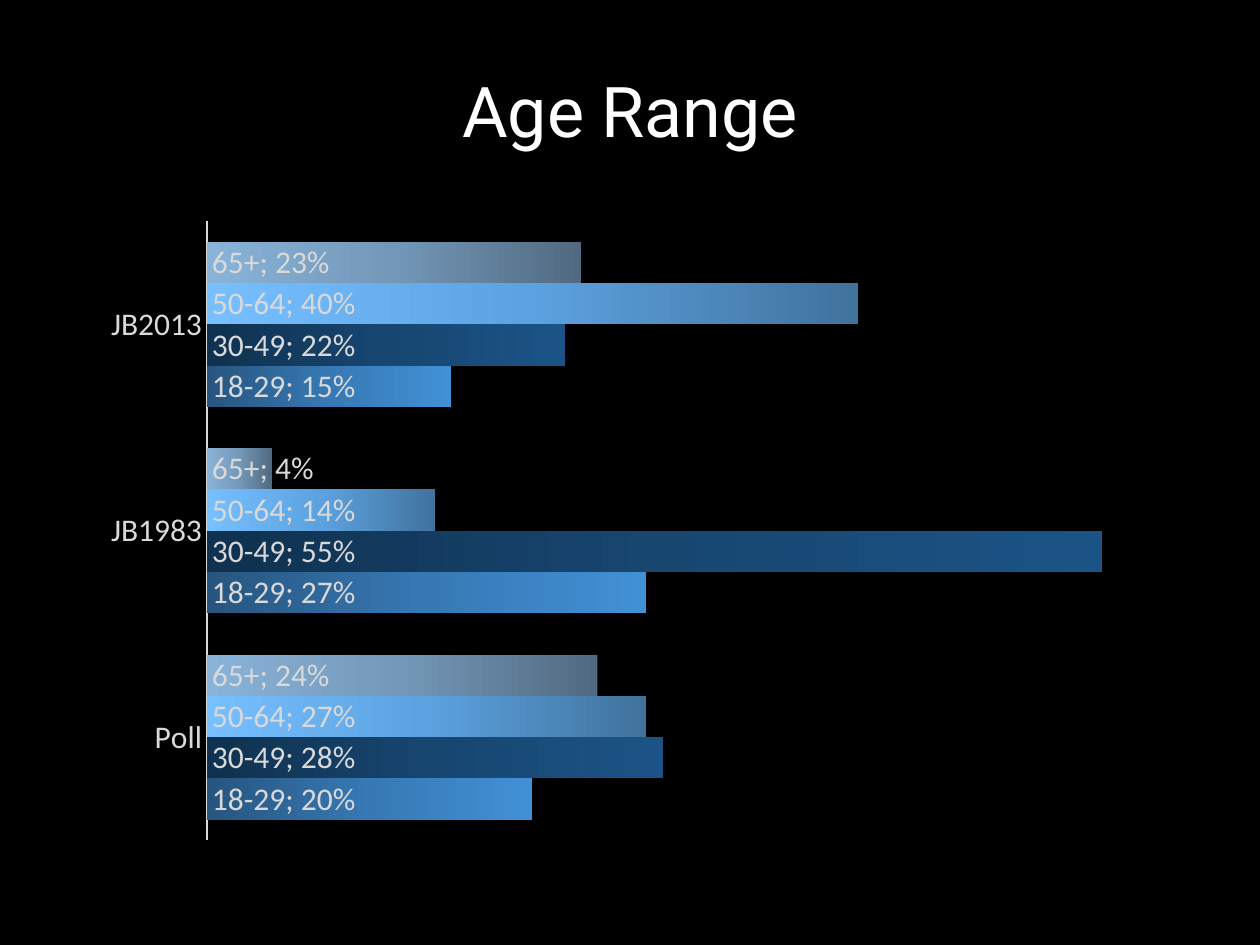
"""Build the age range slide with a clustered bar chart of three surveys."""
from copy import deepcopy
from dataclasses import dataclass

from lxml import etree
from pptx import Presentation, util as u
from pptx.chart import data as chart_data
from pptx.chart.chart import Chart
from pptx.dml.color import RGBColor
from pptx.enum import chart as ch, text as tx
from pptx.oxml.ns import qn
from pptx.slide import Slide

LABEL_COLOR = "D9D9D9"
SURVEYS = ("Poll", "JB1983", "JB2013")
PLOT_LAYOUT = {
    "layoutTarget": "inner", "xMode": "edge", "yMode": "edge",
    "x": "0.127", "y": "0", "w": "0.861", "h": "0.96",
}


@dataclass(frozen=True)
class AgeGroup:
    name: str
    shares: tuple[float, float, float]
    gradient: tuple[str, str, str]
    angle: int


AGE_GROUPS = (
    AgeGroup("18-29", (0.20, 0.27, 0.15), ("27557F", "3779B4", "4190D6"), 0),
    AgeGroup("30-49", (0.28, 0.55, 0.22), ("10314F", "174671", "1B5386"), 0),
    AgeGroup("50-64", (0.27, 0.14, 0.40), ("40729D", "5CA2E0", "77BFFF"), 180),
    AgeGroup("65+", (0.24, 0.04, 0.23), ("516A81", "7397B7", "89B3D9"), 180),
)


def rgb(color: str) -> RGBColor:
    return RGBColor.from_string(color)


def add_title(slide: Slide, title: str) -> None:
    box = slide.shapes.add_textbox(u.Pt(36), u.Pt(20), u.Pt(648), u.Pt(70))
    frame = box.text_frame
    frame.word_wrap = True
    frame.vertical_anchor = tx.MSO_ANCHOR.BOTTOM
    frame.text = title
    para = frame.paragraphs[0]
    para.alignment = tx.PP_ALIGN.CENTER
    font = para.runs[0].font
    font.name, font.size = "Roboto", u.Pt(40)
    font.color.rgb = rgb("FFFFFF")


def style_series(series, group: AgeGroup) -> None:
    series.invert_if_negative = False
    fill = series.format.fill
    fill.gradient()
    fill.gradient_angle = group.angle
    stop_list = series._element.find(".//" + qn("a:gsLst"))
    stop_list.append(deepcopy(stop_list[0]))
    for index, (stop, color) in enumerate(zip(fill.gradient_stops, group.gradient)):
        stop.position = index / 2
        stop.color.rgb = rgb(color)

    labels = series.data_labels
    labels.show_value = labels.show_series_name = True
    labels.number_format, labels.number_format_is_linked = "0%", False
    labels.position = ch.XL_LABEL_POSITION.INSIDE_BASE
    style_font(labels.font)
    separator = etree.Element(qn("c:separator"))
    separator.text = "; "
    labels._element.find(qn("c:showBubbleSize")).addnext(separator)


def style_font(font) -> None:
    font.name, font.size = "Calibri", u.Pt(18)
    font.color.rgb = rgb(LABEL_COLOR)


def place_plot(chart: Chart) -> None:
    plot_area = chart._chartSpace.find(".//" + qn("c:plotArea"))
    for old_layout in plot_area.findall(qn("c:layout")):
        plot_area.remove(old_layout)
    layout = etree.Element(qn("c:layout"))
    manual = etree.SubElement(layout, qn("c:manualLayout"))
    for tag, value in PLOT_LAYOUT.items():
        etree.SubElement(manual, qn(f"c:{tag}"), val=value)
    plot_area.insert(0, layout)


def add_age_chart(slide: Slide) -> None:
    data = chart_data.CategoryChartData(number_format="0%")
    data.categories = SURVEYS
    for group in AGE_GROUPS:
        data.add_series(group.name, group.shares)
    chart = slide.shapes.add_chart(
        ch.XL_CHART_TYPE.BAR_CLUSTERED,
        u.Pt(36), u.Pt(126), u.Pt(648), u.Pt(369), data,
    ).chart
    chart.has_legend = chart.has_title = False
    style_font(chart.font)
    place_plot(chart)

    plot = chart.plots[0]
    plot.gap_width, plot.overlap, plot.vary_by_categories = 100, 0, False
    for series, group in zip(plot.series, AGE_GROUPS):
        style_series(series, group)

    survey_axis = chart.category_axis
    survey_axis.major_tick_mark = survey_axis.minor_tick_mark = ch.XL_TICK_MARK.NONE
    survey_axis.format.line.width = u.Pt(0.75)
    survey_axis.format.line.color.rgb = rgb(LABEL_COLOR)
    share_axis = chart.value_axis
    share_axis.minimum_scale, share_axis.maximum_scale = 0, 0.6
    share_axis.has_major_gridlines = False
    share_axis.visible = False


def main() -> None:
    deck = Presentation()
    deck.slide_width, deck.slide_height = u.Pt(720), u.Pt(540)
    slide = deck.slides.add_slide(deck.slide_layouts[6])
    slide.background.fill.solid()
    slide.background.fill.fore_color.rgb = rgb("000000")
    add_title(slide, "Age Range")
    add_age_chart(slide)
    deck.save("out.pptx")


if __name__ == "__main__":
    main()
